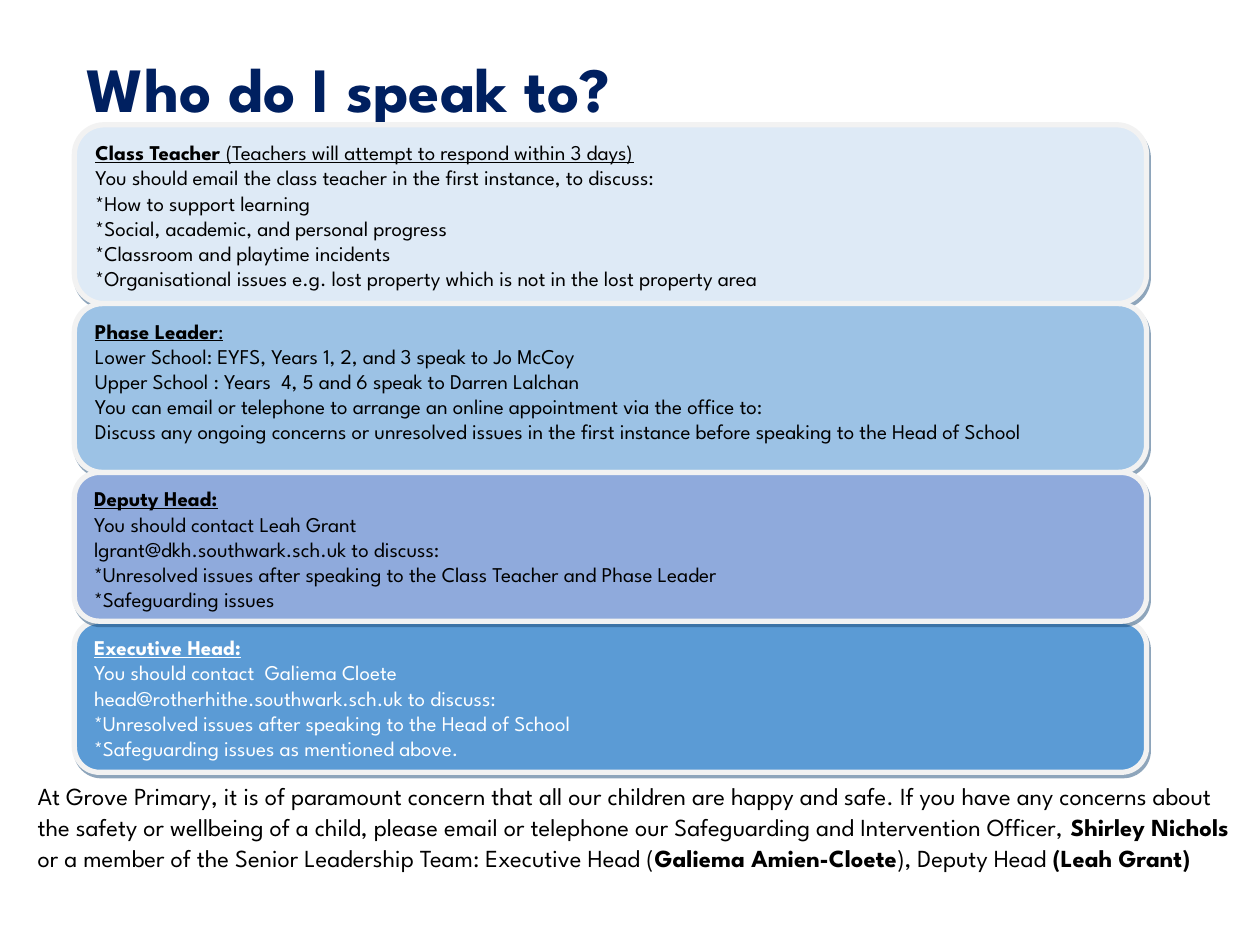
"""Build the school contact slide: a title, four stacked panels and a safeguarding note."""
from lxml.etree import SubElement
from pptx import Presentation
from pptx.dml.color import RGBColor
from pptx.enum.shapes import MSO_SHAPE
from pptx.enum.text import MSO_ANCHOR, PP_ALIGN
from pptx.oxml.ns import qn
from pptx.util import Inches, Pt

COLOURS = {
    "title": "002060", "text": "000000", "light text": "FFFFFF",
    "border": "F2F2F2", "shadow": "1F4D78",
    "teacher": "DEEAF6", "phase": "9CC2E5", "deputy": "8FAADC", "executive": "5B9BD5",
}
HEADING = {"bold": True, "underline": True}
UNDERLINED = {"underline": True}
BOLD = {"bold": True}
PANEL_LEFT, PANEL_WIDTH = 0.59, 8.51

PANELS = [
    ("teacher", "text", 0.99, 1.42, [
        [("Class Teacher ", HEADING),
         ("(Teachers will attempt to respond within 3 days)", UNDERLINED)],
        "You should email the class teacher in the first instance, to discuss:",
        "*How to support learning",
        "*Social, academic, and personal progress",
        "*Classroom and playtime incidents",
        "*Organisational issues e.g. lost property which is not in the lost property area",
    ]),
    ("phase", "text", 2.41, 1.34, [
        [("Phase Leader", HEADING), (":", UNDERLINED)],
        "Lower School: EYFS, Years 1, 2, and 3 speak to Jo McCoy",
        "Upper School : Years  4, 5 and 6 speak to Darren Lalchan",
        "You can email or telephone to arrange an online appointment via the office to:",
        "Discuss any ongoing concerns or unresolved issues in the first instance "
        "before speaking to the Head of School",
    ]),
    ("executive", "light text", 4.93, 1.2, [
        [("Executive Head:", HEADING)],
        "You should contact  Galiema Cloete",
        "head@rotherhithe.southwark.sch.uk to discuss:",
        "*Unresolved issues after speaking to the Head of School",
        "*Safeguarding issues as mentioned above.",
    ]),
    ("deputy", "text", 3.75, 1.18, [
        [("Deputy Head:", HEADING)],
        "You should contact Leah Grant",
        "lgrant@dkh.southwark.sch.uk to discuss:",
        "*Unresolved issues after speaking to the Class Teacher and Phase Leader",
        "*Safeguarding issues",
    ]),
]

NOTE = [
    ("At Grove Primary, it is of paramount concern that all our children are happy and safe. "
     "If you have any concerns about the safety or wellbeing of a child, please email or "
     "telephone our Safeguarding and Intervention Officer, ", {}),
    ("Shirley Nichols ", BOLD),
    ("or a member of the Senior Leadership Team: Executive Head (", {}),
    ("Galiema Amien-Cloete", BOLD),
    ("), Deputy Head ", {}),
    ("(Leah Grant)", BOLD),
]


class SlideBuilder:
    """Hold the text style and the current page, and add elements to it."""

    def __init__(self, page, font="League Spartan"):
        self.page = page
        self.font = font

    def fill_text(self, box, lines, size, colour, anchor=MSO_ANCHOR.TOP, **paragraph_format):
        """Fill a box with lines, each a string or a list of (text, format) spans."""
        frame = box.text_frame
        frame.word_wrap = True
        frame.vertical_anchor = anchor
        for index, line in enumerate(lines):
            para = frame.add_paragraph() if index else frame.paragraphs[0]
            for name, value in {"alignment": PP_ALIGN.LEFT, **paragraph_format}.items():
                setattr(para, name, value)
            for text, extra in [(line, {})] if isinstance(line, str) else line:
                span = para.add_run()
                span.text = text
                span.font.color.rgb = RGBColor.from_string(COLOURS[colour])
                values = {"name": self.font, "size": Pt(size), "bold": False, **extra}
                for name, value in values.items():
                    setattr(span.font, name, value)

    def title(self, text, left, top, width, height):
        """Place and format the title placeholder."""
        box = self.page.shapes.title
        sides = {"left": left, "top": top, "width": width, "height": height}
        for name, value in sides.items():
            setattr(box, name, Inches(value))
        self.fill_text(box, [[(text, BOLD)]], 36, "title", MSO_ANCHOR.MIDDLE, line_spacing=0.9)

    def shadow(self, box):
        """Give a box a hard, half-transparent shadow at its lower right."""
        box.shadow.inherit = False
        effects = box._element.spPr.find(qn("a:effectLst"))
        outer = SubElement(effects, qn("a:outerShdw"), blurRad="0", dist=str(Pt(2.2)),
                           dir=str(63 * 60000), algn="ctr", rotWithShape="0")
        colour = SubElement(outer, qn("a:srgbClr"), val=COLOURS["shadow"])
        SubElement(colour, qn("a:alpha"), val="50000")

    def panel(self, fill, colour, top, height, lines):
        """Add a rounded panel with a pale border and its contact details."""
        box = self.page.shapes.add_shape(
            MSO_SHAPE.ROUNDED_RECTANGLE, Inches(PANEL_LEFT), Inches(top),
            Inches(PANEL_WIDTH), Inches(height))
        box.fill.solid()
        box.fill.fore_color.rgb = RGBColor.from_string(COLOURS[fill])
        box.line.color.rgb = RGBColor.from_string(COLOURS["border"])
        box.line.width = Pt(3)
        self.shadow(box)
        self.fill_text(box, lines, 12, colour)

    def note(self, spans, left, top, width, height):
        """Add a free paragraph of text."""
        sides = [Inches(value) for value in (left, top, width, height)]
        box = self.page.shapes.add_textbox(*sides)
        self.fill_text(box, [spans], 14, "text", line_spacing=1.07,
                       space_before=Pt(7.5), space_after=Pt(8))


def main():
    """Create the deck and save it."""
    deck = Presentation()
    deck.slide_width, deck.slide_height = Inches(10), Inches(7.5)
    builder = SlideBuilder(deck.slides.add_slide(deck.slide_layouts[5]))
    builder.title("Who do I speak to?", 0.59, 0.01, 8.62, 1.45)
    for panel in PANELS:
        builder.panel(*panel)
    builder.note(NOTE, 0.2, 6.13, 9.8, 1.1)
    deck.save("out.pptx")


if __name__ == "__main__":
    main()
